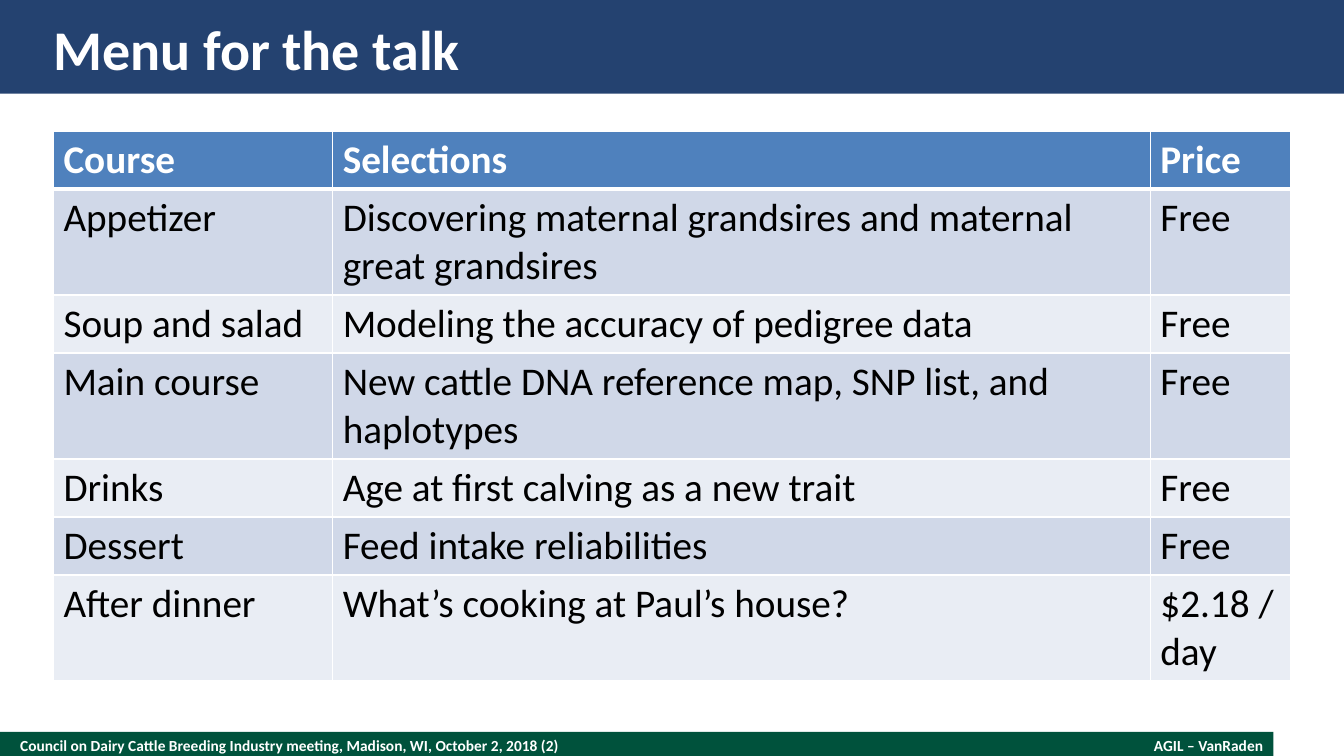
from lxml.etree import SubElement
from pptx import Presentation
from pptx.dml.color import RGBColor
from pptx.enum.shapes import MSO_SHAPE as Shape
from pptx.enum.text import MSO_ANCHOR as Anchor, MSO_AUTO_SIZE as AutoSize, PP_ALIGN as Align
from pptx.oxml.ns import qn
from pptx.util import Inches, Pt

# Content
TITLE = "Menu for the talk"
MEETING = "Council on Dairy Cattle Breeding Industry meeting, Madison, WI, October 2, 2018 (2)"
SPEAKER = "AGIL – VanRaden"
MENU = [
    ("Course", "Selections", "Price"),
    ("Appetizer", "Discovering maternal grandsires and maternal great grandsires", "Free"),
    ("Soup and salad", "Modeling the accuracy of pedigree data", "Free"),
    ("Main course", "New cattle DNA reference map, SNP list, and haplotypes", "Free"),
    ("Drinks", "Age at first calving as a new trait", "Free"),
    ("Dessert", "Feed intake reliabilities", "Free"),
    ("After dinner", "What’s cooking at Paul’s house?", "$2.18 / day"),
]

# Theme
THEME = {
    "font": "Calibri",
    "title_size": 40, "table_size": 28, "footer_size": 11,
    "white": "FFFFFF", "black": "000000", "navy": "244270", "green": "00523C",
    "header": "4F81BD", "bands": ("D0D8E8", "E9EDF4"),
    "rule": 1, "header_rule": 3,
}

# Layout, in inches
WIDTH, HEIGHT = 13.33, 7.5
MARGIN = 0.53
CONTENT_WIDTH = 12.27
TITLE_BAND = (0, 0, WIDTH, 0.93)
FOOTER_BAND = (0, 7.26, 12.63, 0.27)
TITLE_BOX = (MARGIN, 0.13, CONTENT_WIDTH, 0.7)
MEETING_BOX = (0.2, 7.26, 8.67, 0.27)
SPEAKER_BOX = (9.6, 7.3, 2.93, 0.19)
TABLE_TOP = 1.3
COLUMNS = (2.77, 8.11, 1.39)
LINES_PER_ROW = (1, 2, 1, 2, 1, 1, 2)
LINE_HEIGHT, ROW_PADDING = 0.47, 0.1


def color(name):
    return RGBColor.from_string(THEME[name])


def inches(box):
    return [Inches(length) for length in box]


def write(frame, text, size, ink, bold, align=Align.LEFT):
    para = frame.paragraphs[0]
    para.alignment = align
    span = para.add_run()
    span.text = text
    style = {"name": THEME["font"], "size": Pt(THEME[size]), "bold": bold}
    for name, value in style.items():
        setattr(span.font, name, value)
    span.font.color.rgb = color(ink)


def add_band(page, box, fill):
    band = page.shapes.add_shape(Shape.RECTANGLE, *inches(box))
    band.shadow.inherit = False
    band.fill.solid()
    band.fill.fore_color.rgb = color(fill)
    band.line.fill.background()


def label(shape, text, size, align=Align.LEFT):
    frame = shape.text_frame
    layout = {"margin_left": 0, "margin_right": 0, "margin_top": 0, "margin_bottom": 0,
              "word_wrap": True, "auto_size": AutoSize.NONE, "vertical_anchor": Anchor.MIDDLE}
    for name, value in layout.items():
        setattr(frame, name, value)
    write(frame, text, size, "white", True, align)


def add_borders(cell, top, bottom):
    properties = cell._tc.get_or_add_tcPr()
    sides = {"lnL": THEME["rule"], "lnR": THEME["rule"], "lnT": top, "lnB": bottom}
    for side, points in sides.items():
        line = SubElement(properties, qn(f"a:{side}"), w=str(Pt(points)))
        fill = SubElement(line, qn("a:solidFill"))
        SubElement(fill, qn("a:srgbClr"), val=THEME["white"])


def add_menu(page):
    heights = [lines * LINE_HEIGHT + ROW_PADDING for lines in LINES_PER_ROW]
    box = (MARGIN, TABLE_TOP, CONTENT_WIDTH, sum(heights))
    table = page.shapes.add_table(len(MENU), len(COLUMNS), *inches(box)).table
    for column, width in zip(table.columns, COLUMNS):
        column.width = Inches(width)
    for index, (row, height, texts) in enumerate(zip(table.rows, heights, MENU)):
        row.height = Inches(height)
        is_header = index == 0
        shade = THEME["header"] if is_header else THEME["bands"][(index - 1) % 2]
        top = THEME["header_rule" if index == 1 else "rule"]
        bottom = THEME["header_rule" if is_header else "rule"]
        for cell, text in zip(row.cells, texts):
            add_borders(cell, top, bottom)
            cell.fill.solid()
            cell.fill.fore_color.rgb = RGBColor.from_string(shade)
            write(cell.text_frame, text, "table_size", "white" if is_header else "black", is_header)


def main():
    deck = Presentation()
    deck.slide_width, deck.slide_height = Inches(WIDTH), Inches(HEIGHT)
    page = deck.slides.add_slide(deck.slide_layouts[5])

    # Bands and footer
    add_band(page, FOOTER_BAND, "green")
    add_band(page, TITLE_BAND, "navy")
    label(page.shapes.add_textbox(*inches(MEETING_BOX)), MEETING, "footer_size")
    label(page.shapes.add_textbox(*inches(SPEAKER_BOX)), SPEAKER, "footer_size", Align.RIGHT)

    # Title, raised above its band
    title = page.shapes.title
    title.left, title.top, title.width, title.height = inches(TITLE_BOX)
    label(title, TITLE, "title_size")
    page.shapes._spTree.append(title._element)

    # Menu table
    add_menu(page)
    deck.save("out.pptx")


if __name__ == "__main__":
    main()
